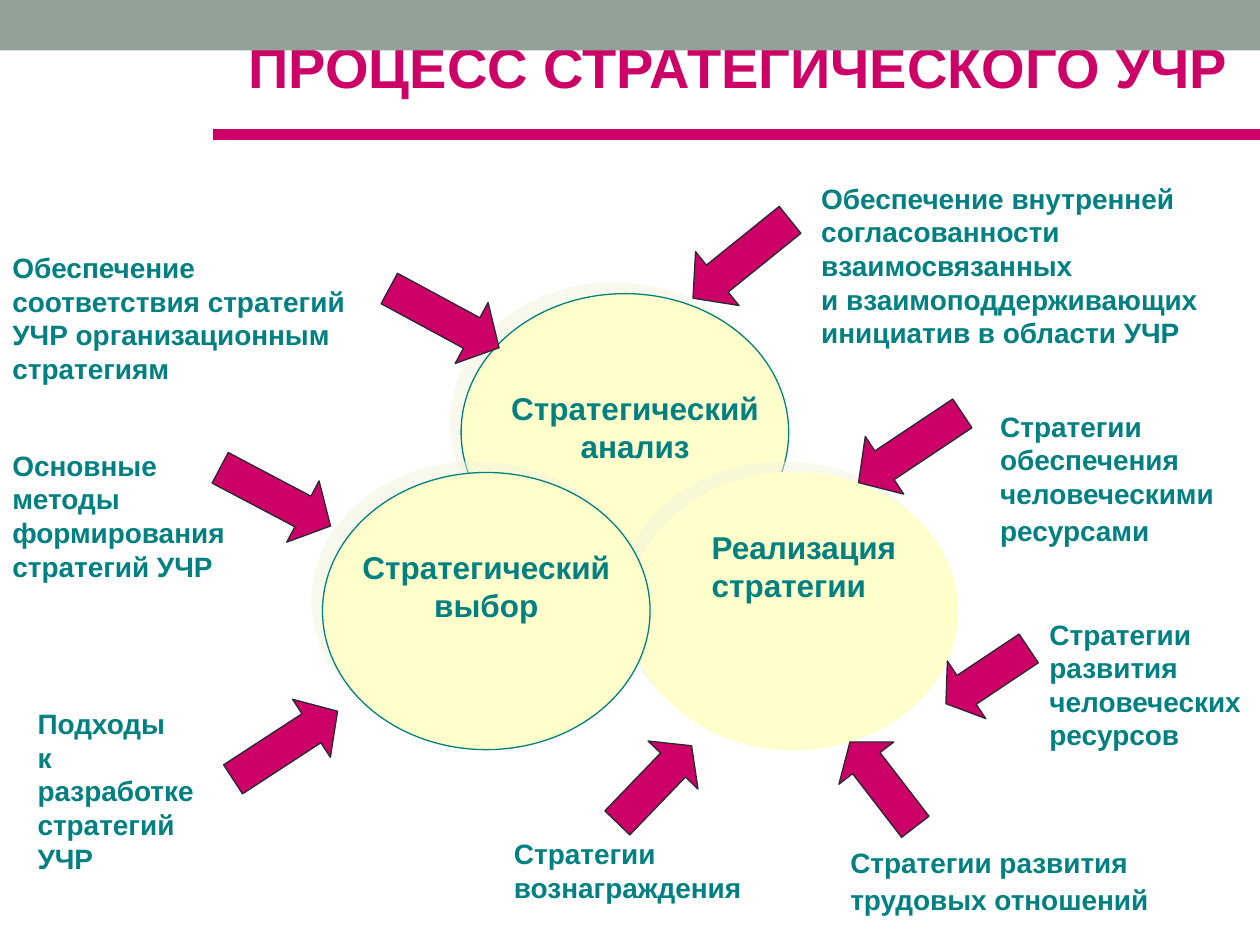
from dataclasses import dataclass
from typing import NamedTuple

from lxml.etree import SubElement
from pptx import Presentation
from pptx.dml.color import RGBColor
from pptx.enum.shapes import MSO_CONNECTOR, MSO_SHAPE
from pptx.enum.text import MSO_ANCHOR, MSO_AUTO_SIZE, PP_ALIGN
from pptx.oxml.ns import qn
from pptx.util import Pt


@dataclass(frozen=True)
class Theme:
    font: str = "Arial"
    band: str = "93A299"
    accent: str = "CC0066"
    teal: str = "008080"
    cream: str = "FFFFCC"
    ink: str = "292934"
    shade: str = "F3F2DC"
    title_size: int = 32
    stage_size: int = 18
    label_size: int = 16
    tail_size: int = 18
    outline: float = 0.75
    rule: float = 6


class Stage(NamedTuple):
    left: float
    top: float
    outline: str


class Label(NamedTuple):
    text: str
    left: float
    top: float
    width: float
    height: float
    size: int
    align: PP_ALIGN = PP_ALIGN.LEFT
    tail: bool = False


class Arrow(NamedTuple):
    left: float
    top: float
    length: float
    angle: float


THEME = Theme()
STAGE_WIDTH, STAGE_HEIGHT = 187.2, 158.4
ARROW_HEIGHT = 39.6
LONG, MEDIUM, SHORT = 71.3, 61.2, 56.9

STAGES = [
    Stage(263.5, 167.8, THEME.teal),
    Stage(360, 270, THEME.cream),
    Stage(184.3, 270, THEME.teal),
]
LABELS = [
    Label("Стратегический анализ", 280.8, 218.9, 164.2, 50.4, THEME.stage_size, PP_ALIGN.CENTER),
    Label("Реализация стратегии", 399.6, 298.1, 124.6, 50.4, THEME.stage_size),
    Label("Стратегический выбор", 195.8, 309.6, 164.2, 50.4, THEME.stage_size, PP_ALIGN.CENTER),
    Label("Обеспечение соответствия стратегий УЧР организационным стратегиям",
          0, 139.7, 209.5, 84.2, THEME.label_size),
    Label("Обеспечение внутренней согласованности взаимосвязанных\v"
          "и взаимоподдерживающих инициатив в\u00a0области УЧР",
          462.2, 100.1, 257.8, 103.7, THEME.label_size),
    Label("Основные методы формирования стратегий УЧР",
          0, 252.7, 155.5, 84.2, THEME.label_size),
    Label("Подходы\vк разработке стратегий УЧР",
          14.4, 400.3, 113, 103.7, THEME.label_size),
    Label("Стратегии обеспечения человеческими ресурсами",
          564.5, 230.4, 155.5, 86.4, THEME.label_size, tail=True),
    Label("Стратегии\vразвития человеческих ресурсов",
          592.6, 349.2, 150.5, 84.2, THEME.label_size),
    Label("Стратегии развития трудовых отношений",
          478.8, 479.5, 206.6, 48.2, THEME.label_size, tail=True),
    Label("Стратегии вознаграждения", 286.6, 474.5, 147.6, 46.1, THEME.label_size),
]
ARROWS = [
    Arrow(218.2, 162, LONG, 28.4),
    Arrow(121.7, 264.2, LONG, 27.8),
    Arrow(127.4, 406.1, LONG, 326.9),
    Arrow(388.1, 128.2, LONG, 141.1),
    Arrow(484.6, 236.2, LONG, 146.3),
    Arrow(343.4, 428.4, MEDIUM, 313.9),
    Arrow(535.7, 366.5, SHORT, 146.3),
    Arrow(473.8, 428.4, MEDIUM, 232.4),
]


def add_shadow(properties, distance: float, degrees: int, opacity: int) -> None:
    """Append a hard-edged outer shadow to shape or run properties."""
    effects = properties.find(qn("a:effectLst"))
    if effects is None:
        effects = SubElement(properties, qn("a:effectLst"))
    shadow = SubElement(effects, qn("a:outerShdw"), blurRad="0", dist=str(int(Pt(distance))),
                        dir=str(degrees * 60000), algn="ctr", rotWithShape="0")
    color = SubElement(shadow, qn("a:srgbClr"), val=THEME.shade)
    SubElement(color, qn("a:alpha"), val=str(opacity * 1000))


def write(frame, text: str, *, size: int, color: str, align=PP_ALIGN.LEFT,
          tail: bool = False, shadow: bool = False) -> None:
    """Fill a text frame; tail ends it with a space that sets the last line's height."""
    frame.word_wrap = True
    frame.auto_size = MSO_AUTO_SIZE.NONE
    frame.vertical_anchor = MSO_ANCHOR.TOP
    paragraph = frame.paragraphs[0]
    paragraph.text = text
    paragraph.alignment = align
    for line_break in paragraph._p.findall(qn("a:br")):
        SubElement(line_break, qn("a:rPr"), sz=str(size * 100))
    for run in paragraph.runs:
        run.font.size = Pt(size)
        run.font.bold = True
        run.font.color.rgb = RGBColor.from_string(color)
        if shadow:
            add_shadow(run.font._element, 2.5, 45, 100)
        run.font.name = THEME.font
    if tail:
        ending = paragraph.add_run()
        ending.text = " "
        ending.font.size = Pt(THEME.tail_size)
        ending.font.name = THEME.font


def add_filled(slide, kind: MSO_SHAPE, left: float, top: float, width: float, height: float,
               fill: str, outline: str | None = None):
    shape = slide.shapes.add_shape(kind, Pt(left), Pt(top), Pt(width), Pt(height))
    shape.shadow.inherit = False
    shape.fill.solid()
    shape.fill.fore_color.rgb = RGBColor.from_string(fill)
    if outline:
        shape.line.color.rgb = RGBColor.from_string(outline)
        shape.line.width = Pt(THEME.outline)
    else:
        shape.line.fill.background()
    return shape


def add_stage(slide, stage: Stage) -> None:
    ellipse = add_filled(slide, MSO_SHAPE.OVAL, stage.left, stage.top,
                         STAGE_WIDTH, STAGE_HEIGHT, THEME.cream, stage.outline)
    add_shadow(ellipse._element.spPr, 8.5, 225, 50)


def add_label(slide, label: Label) -> None:
    box = slide.shapes.add_textbox(Pt(label.left), Pt(label.top), Pt(label.width), Pt(label.height))
    write(box.text_frame, label.text, size=label.size, color=THEME.teal,
          align=label.align, tail=label.tail)


def add_arrow(slide, arrow: Arrow) -> None:
    """Draw an arrow whose head takes a quarter of its length."""
    shape = add_filled(slide, MSO_SHAPE.RIGHT_ARROW, arrow.left, arrow.top,
                       arrow.length, ARROW_HEIGHT, THEME.accent, THEME.ink)
    shape.adjustments[1] = arrow.length / ARROW_HEIGHT / 4
    shape.rotation = arrow.angle


def add_title(slide) -> None:
    title = slide.shapes.title
    title.left, title.top, title.width, title.height = Pt(110.2), Pt(15.1), Pt(623.5), Pt(45.4)
    write(title.text_frame, "ПРОЦЕСС СТРАТЕГИЧЕСКОГО УЧР", size=THEME.title_size,
          color=THEME.accent, align=PP_ALIGN.CENTER, shadow=True)
    rule = slide.shapes.add_connector(MSO_CONNECTOR.STRAIGHT, Pt(121.7), Pt(77), Pt(720), Pt(77))
    rule.line.color.rgb = RGBColor.from_string(THEME.accent)
    rule.line.width = Pt(THEME.rule)
    SubElement(rule._element.spPr, qn("a:effectLst"))


def main() -> None:
    presentation = Presentation()
    presentation.slide_width, presentation.slide_height = Pt(720), Pt(540)
    slide = presentation.slides.add_slide(presentation.slide_layouts[5])
    add_filled(slide, MSO_SHAPE.RECTANGLE, 0, 0, 720, 28.8, THEME.band)
    add_title(slide)
    for stage in STAGES:
        add_stage(slide, stage)
    for label in LABELS:
        add_label(slide, label)
    for arrow in ARROWS:
        add_arrow(slide, arrow)
    presentation.save("out.pptx")


if __name__ == "__main__":
    main()
